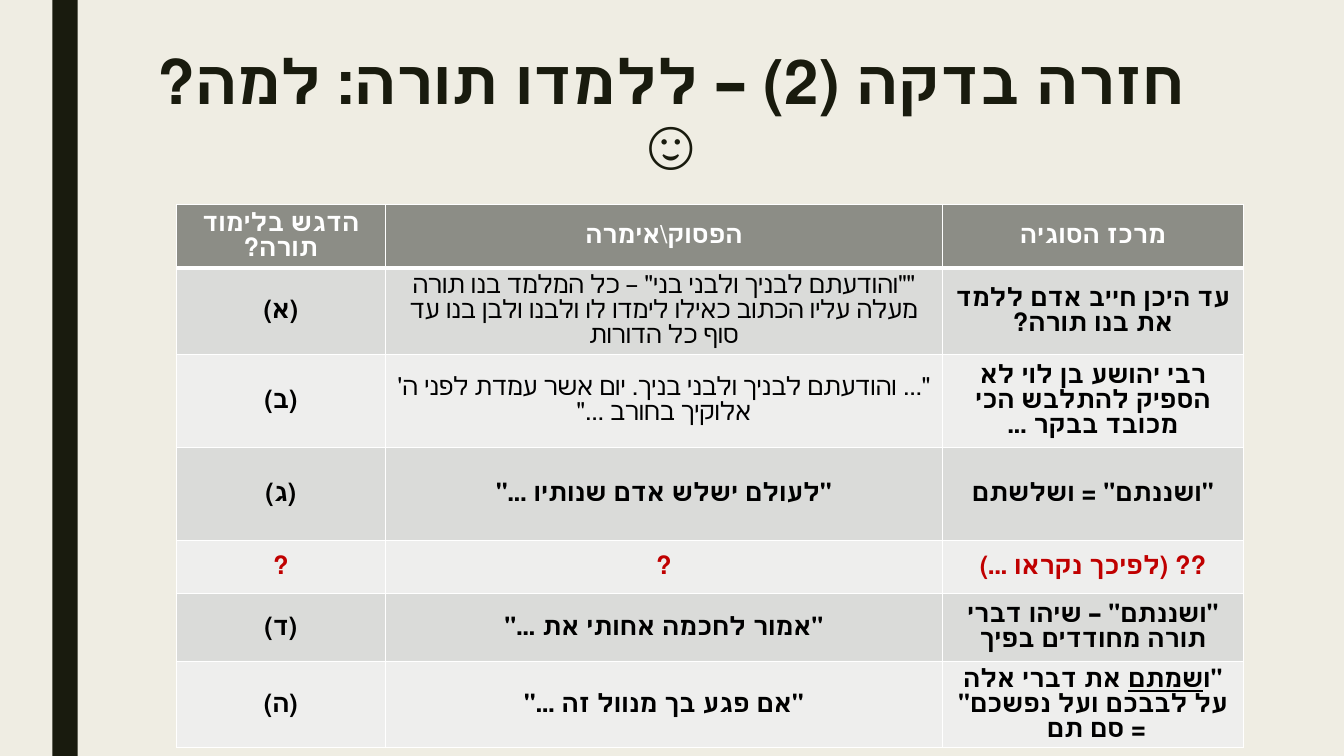
from lxml import etree
from pptx import Presentation
from pptx.dml.color import RGBColor
from pptx.enum.shapes import MSO_SHAPE
from pptx.enum.text import MSO_ANCHOR, PP_ALIGN
from pptx.oxml.ns import qn
from pptx.util import Inches, Pt

RECTANGLE = MSO_SHAPE.RECTANGLE
TOP, MIDDLE = MSO_ANCHOR.TOP, MSO_ANCHOR.MIDDLE
CENTER = PP_ALIGN.CENTER

COLORS = {
    "paper": "EFEDE3",
    "ink": "191B0E",
    "header": "8C8D86",
    "dark_band": "DADBD9",
    "light_band": "EEEEED",
    "white": "FFFFFF",
    "black": "000000",
    "red": "C00000",
}
TITLE_FONT, TABLE_FONT = "Roboto", "Karla"

TITLE = "חזרה בדקה (2) – ללמדו תורה: למה? ☺"
HEADERS = ["הדגש בלימוד תורה?", r"הפסוק\אימרה", "מרכז הסוגיה"]
TOPICS = [
    ["(א)",
     '""והודעתם לבניך ולבני בני" – כל המלמד בנו תורה מעלה עליו הכתוב '
     "כאילו לימדו לו ולבנו ולבן בנו עד סוף כל הדורות",
     "עד היכן חייב אדם ללמד את בנו תורה?"],
    ["(ב)",
     '''"... והודעתם לבניך ולבני בניך. יום אשר עמדת לפני ה' אלוקיך בחורב ..."''',
     "רבי יהושע בן לוי לא הספיק להתלבש הכי מכובד בבקר ..."],
    ["(ג)", '"לעולם ישלש אדם שנותיו ..."', '"ושננתם" = ושלשתם'],
    ["?", "?", "?? (לפיכך נקראו ...)"],
    ["(ד)", '"אמור לחכמה אחותי את ..."', '"ושננתם" – שיהו דברי תורה מחודדים בפיך'],
    ["(ה)", '"אם פגע בך מנוול זה ..."',
     ['"ו', ("שמתם", True), ' את דברי אלה על לבבכם ועל נפשכם" = סם תם ']],
]
QUESTION_ROW = 4
PLAIN_CELLS = {(1, 1), (2, 1)}
COLUMN_SHARES = [15.53, 41.48, 22.36]
ROW_SHARES = [8.4, 11.4, 12.3, 12.3, 7.07, 9.0, 11.4]


def color(name):
    return RGBColor.from_string(COLORS[name])


def write(para, text, *, font, size, ink, spacing, bold=True):
    para.alignment = CENTER
    para._p.get_or_add_pPr().set("rtl", "1")
    para.line_spacing = spacing
    for part in [text] if isinstance(text, str) else text:
        words, underline = (part, False) if isinstance(part, str) else part
        span = para.add_run()
        span.text = words
        span.font.name = font
        span.font.size = Pt(size)
        span.font.bold = bold
        span.font.underline = underline
        span.font.color.rgb = color(ink)
        span._r.get_or_add_rPr().set("lang", "he-IL")


class SlideBuilder:
    def __init__(self, deck):
        self.width, self.height = deck.slide_width, deck.slide_height
        self.slide = deck.slides.add_slide(deck.slide_layouts[6])
        fill = self.slide.background.fill
        fill.solid()
        fill.fore_color.rgb = color("paper")

    def across(self, percent):
        return round(self.width * percent / 100)

    def down(self, percent):
        return round(self.height * percent / 100)

    def place(self, left, top, width, height):
        return self.across(left), self.down(top), self.across(width), self.down(height)

    def bar(self, *area, fill):
        shape = self.slide.shapes.add_shape(RECTANGLE, *self.place(*area))
        shape.shadow.inherit = False
        shape.fill.solid()
        shape.fill.fore_color.rgb = color(fill)
        shape.line.fill.background()

    def text(self, *area, text, **style):
        box = self.slide.shapes.add_textbox(*self.place(*area))
        frame = box.text_frame
        frame.word_wrap = True
        frame.vertical_anchor = TOP
        write(frame.paragraphs[0], text, **style)

    def border(self, cell, bottom):
        properties = cell._tc.get_or_add_tcPr()
        for side, points in zip("LRTB", (1, 1, 1, bottom)):
            line = etree.SubElement(properties, qn(f"a:ln{side}"), w=str(Pt(points)))
            solid = etree.SubElement(line, qn("a:solidFill"))
            etree.SubElement(solid, qn("a:srgbClr"), val=COLORS["white"])

    def cell(self, cell, text, *, fill, bottom=1, **style):
        self.border(cell, bottom)
        cell.fill.solid()
        cell.fill.fore_color.rgb = color(fill)
        cell.vertical_anchor = MIDDLE
        write(cell.text_frame.paragraphs[0], text, font=TABLE_FONT, size=18,
              spacing=Pt(18), **style)

    def table(self, left, top, columns, rows):
        area = self.place(left, top, sum(columns), sum(rows))
        table = self.slide.shapes.add_table(len(rows), len(columns), *area).table
        for column, share in zip(table.columns, columns):
            column.width = self.across(share)
        for row, share in zip(table.rows, rows):
            row.height = self.down(share)
        return table


def fill_table(builder, table):
    for column, text in enumerate(HEADERS):
        builder.cell(table.cell(0, column), text, fill="header", ink="white", bottom=3)
    for row, texts in enumerate(TOPICS, start=1):
        band = "dark_band" if row % 2 else "light_band"
        ink = "red" if row == QUESTION_ROW else "black"
        for column, text in enumerate(texts):
            bold = (row, column) not in PLAIN_CELLS
            builder.cell(table.cell(row, column), text, fill=band, ink=ink, bold=bold)


def main():
    deck = Presentation()
    deck.slide_width, deck.slide_height = Inches(13.33), Inches(7.5)
    builder = SlideBuilder(deck)
    builder.bar(3.9, 0, 1.88, 100, fill="ink")
    builder.text(9.98, 6.27, 79.97, 12.53, text=TITLE, font=TITLE_FONT, size=44,
                 ink="ink", spacing=0.89)
    fill_table(builder, builder.table(13.13, 27.07, COLUMN_SHARES, ROW_SHARES))
    deck.save("out.pptx")


if __name__ == "__main__":
    main()
